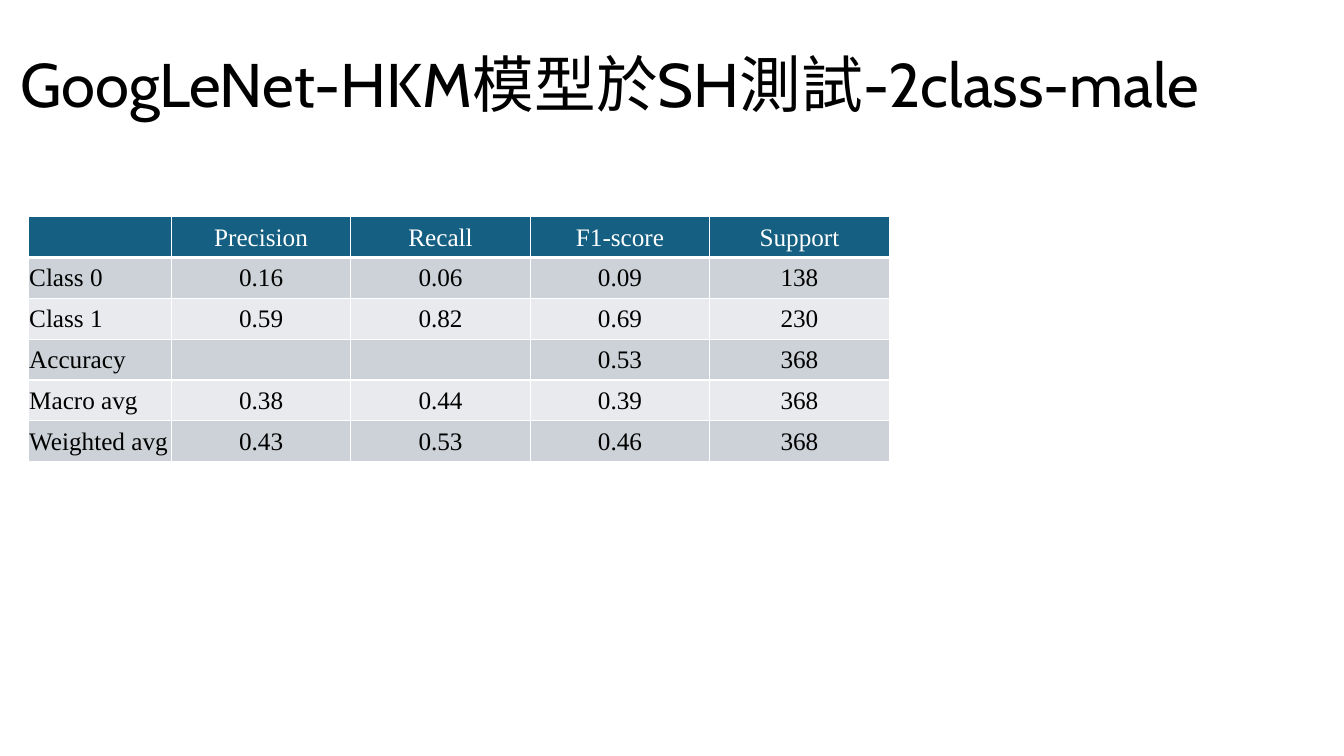
from pptx import Presentation
from pptx.dml.color import RGBColor
from pptx.enum.text import MSO_ANCHOR as Anchor, MSO_AUTO_SIZE as AutoSize, PP_ALIGN as Align
from pptx.oxml.ns import qn
from pptx.util import Inches, Pt
from lxml.etree import SubElement

HEADER_FILL = "156082"
BAND_FILLS = ["CCD2D8", "E8EAED"]
WHITE = "FFFFFF"
BLACK = "000000"
SCORES = [
    ["", "Precision", "Recall", "F1-score", "Support"],
    ["Class 0", "0.16", "0.06", "0.09", "138"],
    ["Class 1", "0.59", "0.82", "0.69", "230"],
    ["Accuracy", "", "", "0.53", "368"],
    ["Macro avg", "0.38", "0.44", "0.39", "368"],
    ["Weighted avg", "0.43", "0.53", "0.46", "368"],
]


def rgb(value):
    """Turn a hex string into a colour."""
    return RGBColor.from_string(value)


def write_text(frame, text, size=18, font="Times New Roman", color=BLACK,
               align=Align.LEFT, spacing=None):
    """Write one formatted paragraph into a text frame."""
    paragraph = frame.paragraphs[0]
    paragraph.alignment = align
    paragraph.line_spacing = spacing
    run = paragraph.add_run()
    run.text = text
    run.font.size = Pt(size)
    run.font.name = font
    run.font.color.rgb = rgb(color)
    properties = run.font._element
    SubElement(properties, qn("a:ea"), typeface=font)


def add_border(cell, side, width):
    """Draw a white border on one side of a cell."""
    line = SubElement(cell._tc.get_or_add_tcPr(), qn(f"a:ln{side}"), w=str(Pt(width)))
    fill = SubElement(line, qn("a:solidFill"))
    SubElement(fill, qn("a:srgbClr"), val=WHITE)


def format_cell(cell, fill, top=1, bottom=1):
    """Set the margins, borders and fill of a cell."""
    cell.margin_left = cell.margin_right = cell.margin_top = Inches(0.01)
    cell.margin_bottom = 0
    cell.vertical_anchor = Anchor.MIDDLE
    for side, width in zip("LRTB", [1, 1, top, bottom]):
        add_border(cell, side, width)
    cell.fill.solid()
    cell.fill.fore_color.rgb = rgb(fill)


def add_title(slide, text):
    """Place and fill the title placeholder."""
    title = slide.shapes.title
    title.left, title.top = Inches(0.1), Inches(0.14)
    title.width, title.height = Inches(13.04), Inches(1.45)
    frame = title.text_frame
    frame.word_wrap = True
    frame.auto_size = AutoSize.NONE
    frame.vertical_anchor = Anchor.MIDDLE
    write_text(frame, text, size=44, font="Cabin", spacing=0.9)


def add_score_table(slide, scores):
    """Add the banded table of classification scores."""
    table = slide.shapes.add_table(len(scores), len(scores[0]), Inches(0.28), Inches(2.15),
                                   Inches(8.54), Inches(2.43)).table
    for index, column in enumerate(table.columns):
        column.width = Inches(1.78 if index else 1.42)
    for row, values in enumerate(scores):
        fill = BAND_FILLS[(row - 1) % 2] if row else HEADER_FILL
        for column, value in enumerate(values):
            cell = table.cell(row, column)
            format_cell(cell, fill, top=3 if row == 1 else 1, bottom=1 if row else 3)
            write_text(cell.text_frame, value, color=BLACK if row else WHITE,
                       align=Align.CENTER if column else Align.LEFT)


def main():
    """Build the slide and save it."""
    deck = Presentation()
    deck.slide_width, deck.slide_height = Inches(13.33), Inches(7.5)
    slide = deck.slides.add_slide(deck.slide_layouts[5])
    add_title(slide, "GoogLeNet-HKM模型於SH測試-2class-male")
    add_score_table(slide, SCORES)
    deck.save("out.pptx")


if __name__ == "__main__":
    main()
